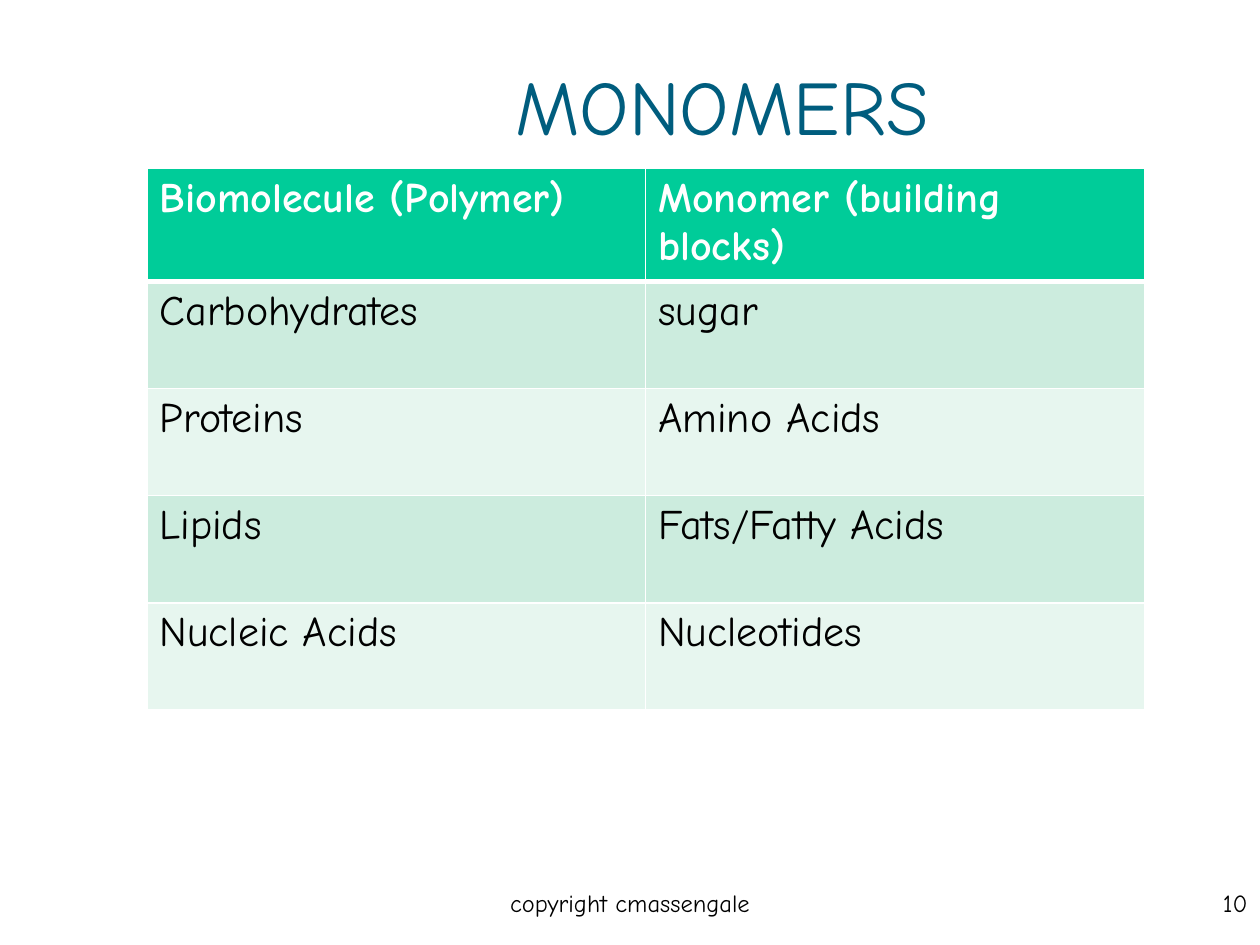
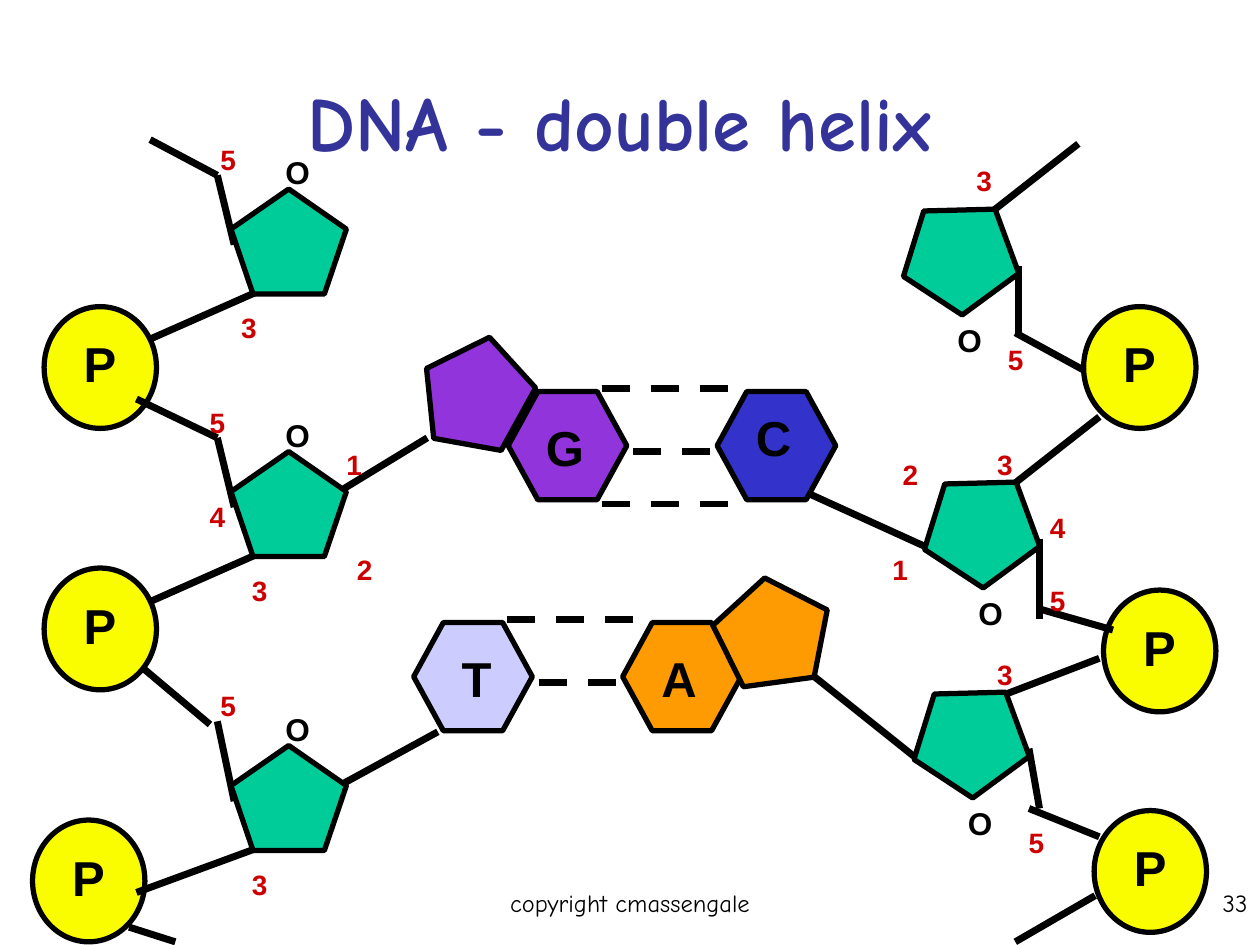
from collections import namedtuple
from lxml.etree import SubElement
from pptx import Presentation
from pptx.dml.color import RGBColor
from pptx.enum.dml import MSO_LINE
from pptx.enum.shapes import MSO_CONNECTOR, MSO_SHAPE
from pptx.enum.text import MSO_ANCHOR, MSO_AUTO_SIZE, PP_ALIGN
from pptx.oxml import parse_xml
from pptx.oxml.ns import nsdecls, qn
from pptx.util import Inches, Pt

COLS, ROWS = 120, 90
WIDTH, HEIGHT = Inches(10), Inches(7.5)
FONT, LABEL_FONT = "Comic Neue", "Arial"
COLORS = {
    "black": "000000", "white": "FFFFFF", "teal": "005D7E", "navy": "333399",
    "header": "00CC99", "band": "CCECDE", "light": "E7F6EF",
    "sugar": "00CC99", "phosphate": "FAFD00", "number": "CC0000",
    "G": "9234DB", "C": "3333CC", "T": "CCCCFF", "A": "FE9B03",
}
Box = namedtuple("Box", "x y w h")

FOOTER = Box(41, 84, 38, 6)
PAGE_NUMBER = Box(95, 84, 25, 6)
SUGAR_SIZE = (11, 10)
PHOSPHATE_SIZE = (10.7, 11.6)
BASE_SIZE = (11.3, 10.3)
BASE_PITCH = 19.9
LETTER_WIDTHS = {"P": 5.5, "G": 6, "C": 5.8, "T": 5.3, "A": 5.8}

MONOMERS = [
    ("Biomolecule (Polymer)", "Monomer (building blocks)"),
    ("Carbohydrates", "sugar"),
    ("Proteins", "Amino Acids"),
    ("Lipids", "Fats/Fatty Acids"),
    ("Nucleic Acids", "Nucleotides"),
]

LEFT_STRAND = {
    "sugars": [(22, 6), (22, 31), (22, 59)],
    "turn": 0,
    "oxygen": (4, -4),
    "phosphates": [(4.2, 17.2), (4.2, 42.1), (3.1, 66.1)],
    "bonds": [
        (14.3, 1.3, 20.7, 4.7), (22.3, 11.3, 20.7, 4.7),
        (14.3, 20.3, 24.7, 15.7), (13, 26, 20.7, 29.7),
        (22.3, 36.3, 20.7, 29.7), (32, 35, 40.7, 29.7),
        (14.3, 45.3, 24.7, 40.7), (20, 57, 13.7, 51.7),
        (22.3, 64.3, 20.7, 56.7), (32, 63, 41.7, 57.7),
        (13, 73, 24.7, 68.7), (12.3, 76.3, 16.7, 77.7),
    ],
    "numbers": [
        ("5", 19.8, 1), ("3", 21.8, 17), ("5", 18.8, 26),
        ("1", 31.8, 30), ("4", 18.8, 35), ("2", 32.8, 40),
        ("3", 22.8, 42), ("5", 19.8, 53), ("3", 22.8, 70),
    ],
}
RIGHT_STRAND = {
    "sugars": [(9, 8), (11, 34), (10, 54)],
    "turn": 178.5,
    "oxygen": (4, 10),
    "phosphates": [(26.2, 17.2), (28.1, 44.2), (27.2, 65.2)],
    "bonds": [
        (17.3, 8.3, 25.7, 1.7), (20, 13.3, 20, 19.7),
        (26.3, 23.3, 19.7, 19.7), (19.3, 34.3, 27.7, 27.7),
        (0, 35, 11, 40), (22, 39.3, 22, 47),
        (22, 46, 29, 48), (18.3, 54.3, 27.7, 50.7),
        (0, 52, 10, 60), (21, 59.3, 22, 65),
        (21, 65, 27.7, 67.7), (27.3, 73.3, 19.7, 77.7),
    ],
    "numbers": [
        ("3", 14.8, 3), ("5", 17.8, 20), ("3", 16.8, 30),
        ("2", 7.8, 31), ("4", 21.8, 36), ("1", 6.8, 40),
        ("5", 21.8, 43), ("3", 16.8, 50), ("5", 19.8, 66),
    ],
}
GC_PAIR = {
    "letters": [("G", 2.4, 1.9), ("C", 22.4, 0.9)],
    "ring": ("G", -8.9, -4.8, 298.9),
    "dashes": [(8.9, -0.3, 22.3), (11.9, 5.7, 19.3), (8.9, 10.7, 22.3)],
}
TA_PAIR = {
    "letters": [("T", 3.4, 1.9), ("A", 22.4, 1.9)],
    "ring": ("A", 28.6, -4.3, 352.3),
    "dashes": [(8.9, -0.3, 22.3), (11.9, 5.7, 20.3)],
}


def color(name):
    """Return the named palette colour."""
    return RGBColor.from_string(COLORS[name])


def gx(cols):
    """Convert grid columns to a length."""
    return int(WIDTH * cols / COLS)


def gy(rows):
    """Convert grid rows to a length."""
    return int(HEIGHT * rows / ROWS)


def place(x, y, w, h):
    """Convert a grid box to slide lengths."""
    return gx(x), gy(y), gx(w), gy(h)


def style_text(tf, size, name, font=FONT, bold=False, align=None):
    """Format every run of a text frame."""
    for p in tf.paragraphs:
        p.alignment = align
        for r in p.runs:
            r.font.name, r.font.size, r.font.bold = font, Pt(size), bold
            r.font.color.rgb = color(name)


def add_text(slide, box, text, size, name="black", bold=False,
             align=PP_ALIGN.CENTER, anchor=MSO_ANCHOR.TOP):
    """Add a wrapped text box in the deck font."""
    tf = slide.shapes.add_textbox(*place(*box)).text_frame
    tf.word_wrap = True
    tf.vertical_anchor = anchor
    tf.text = text
    style_text(tf, size, name, bold=bold, align=align)


def add_title(slide, box, text, name, bold=False):
    """Add the slide title."""
    add_text(slide, box, text, 44, name, bold, anchor=MSO_ANCHOR.MIDDLE)


def add_footer(slide, number):
    """Add the copyright line and the page number."""
    add_text(slide, FOOTER, "copyright cmassengale", 14)
    add_text(slide, PAGE_NUMBER, str(number), 14, align=PP_ALIGN.RIGHT)


def add_label(shapes, text, x, y, w, h, size, name="black"):
    """Add a bold unwrapped label to the diagram."""
    tf = shapes.add_textbox(*place(x, y, w, h)).text_frame
    tf.word_wrap = False
    tf.auto_size = MSO_AUTO_SIZE.SHAPE_TO_FIT_TEXT
    tf.text = text
    style_text(tf, size, name, LABEL_FONT, True)


def add_letter(shapes, letter, x, y):
    """Add the large letter naming a phosphate or a base."""
    add_label(shapes, letter, x, y, LETTER_WIDTHS[letter], 6.7, 28)


def add_part(shapes, kind, x, y, size, name, turn=0):
    """Add one filled and outlined part of the molecule."""
    sp = shapes.add_shape(kind, *place(x, y, *size))
    sp.shadow.inherit = False
    sp.rotation = turn
    sp.fill.solid()
    sp.fill.fore_color.rgb = color(name)
    sp.line.color.rgb = color("black")
    sp.line.width = Pt(3)
    return sp


def add_bond(shapes, x1, y1, x2, y2, dash=None):
    """Add a black bond line."""
    line = shapes.add_connector(MSO_CONNECTOR.STRAIGHT, gx(x1), gy(y1), gx(x2), gy(y2))
    line.line.color.rgb = color("black")
    line.line.width = Pt(4)
    if dash:
        line.line.dash_style = dash
    SubElement(line._element.spPr, qn("a:effectLst"))


def add_borders(cell, top, bottom):
    """Give a table cell white borders."""
    tc_pr = cell._tc.get_or_add_tcPr()
    for i, (side, width) in enumerate(zip("LRTB", (1, 1, top, bottom))):
        tc_pr.insert(i, parse_xml(
            f'<a:ln{side} {nsdecls("a")} w="{Pt(width)}"><a:solidFill>'
            f'<a:srgbClr val="{COLORS["white"]}"/></a:solidFill></a:ln{side}>'))


def add_monomer_table(slide, box):
    """Fill the box with the table of polymers and their monomers."""
    rows, cols = len(MONOMERS), len(MONOMERS[0])
    table = slide.shapes.add_table(rows, cols, *place(*box)).table
    for col in table.columns:
        col.width = gx(box.w / cols)
    for i, texts in enumerate(MONOMERS):
        table.rows[i].height = gy(box.h / rows)
        header = i == 0
        fill = "header" if header else "band" if i % 2 else "light"
        for cell, text in zip(table.rows[i].cells, texts):
            cell.text = text
            style_text(cell.text_frame, 24, "white" if header else "black", bold=header)
            cell.fill.solid()
            cell.fill.fore_color.rgb = color(fill)
            add_borders(cell, 3 if i == 1 else 1, 3 if header else 1)


def add_strand(slide, box, strand):
    """Draw a sugar and phosphate backbone from the box corner."""
    shapes = slide.shapes.add_group_shape().shapes
    for x, y in strand["phosphates"]:
        add_part(shapes, MSO_SHAPE.OVAL, box.x + x, box.y + y, PHOSPHATE_SIZE, "phosphate")
        add_letter(shapes, "P", box.x + x + 2.6, box.y + y + 2)
    for x1, y1, x2, y2 in strand["bonds"]:
        add_bond(shapes, box.x + x1, box.y + y1, box.x + x2, box.y + y2)
    for text, x, y in strand["numbers"]:
        add_label(shapes, text, box.x + x, box.y + y, 3.8, 4.3, 16, "number")
    dx, dy = strand["oxygen"]
    for x, y in strand["sugars"]:
        x, y = box.x + x, box.y + y
        add_label(shapes, "O", x + dx, y + dy, 4.7, 4.8, 18)
        add_part(shapes, MSO_SHAPE.REGULAR_PENTAGON, x, y, SUGAR_SIZE, "sugar", strand["turn"])


def add_base_pair(slide, box, pair):
    """Draw two bases and their hydrogen bonds from the box corner."""
    shapes = slide.shapes.add_group_shape().shapes
    for i, (base, x, y) in enumerate(pair["letters"]):
        sp = add_part(shapes, MSO_SHAPE.HEXAGON, box.x + i * BASE_PITCH, box.y, BASE_SIZE, base)
        sp.adjustments[0] = 0.274
        add_letter(shapes, base, box.x + x, box.y + y)
    for x1, y, x2 in pair["dashes"]:
        add_bond(shapes, box.x + x1, box.y + y, box.x + x2, box.y + y, MSO_LINE.DASH)
    base, x, y, turn = pair["ring"]
    add_part(shapes, MSO_SHAPE.REGULAR_PENTAGON, box.x + x, box.y + y, SUGAR_SIZE, base, turn)


def build_monomers(slide):
    """Build the monomer table slide."""
    add_title(slide, Box(23, 6, 94, 8), "MONOMERS ", "teal")
    add_monomer_table(slide, Box(14, 16, 95, 51))
    add_footer(slide, 10)


def build_helix(slide):
    """Build the double helix diagram slide."""
    add_title(slide, Box(8, 4, 102, 15), "DNA - double helix", "navy", True)
    add_strand(slide, Box(0, 12, 42, 78), LEFT_STRAND)
    add_strand(slide, Box(77, 12, 39, 78), RIGHT_STRAND)
    add_base_pair(slide, Box(48.4, 37.3, 31.2, 10.3), GC_PAIR)
    add_base_pair(slide, Box(39.4, 59.3, 31.2, 10.3), TA_PAIR)
    add_footer(slide, 33)


def main():
    """Build and save the deck."""
    prs = Presentation()
    prs.slide_width, prs.slide_height = WIDTH, HEIGHT
    for build in (build_monomers, build_helix):
        build(prs.slides.add_slide(prs.slide_layouts[6]))
    prs.save("out.pptx")


if __name__ == "__main__":
    main()
